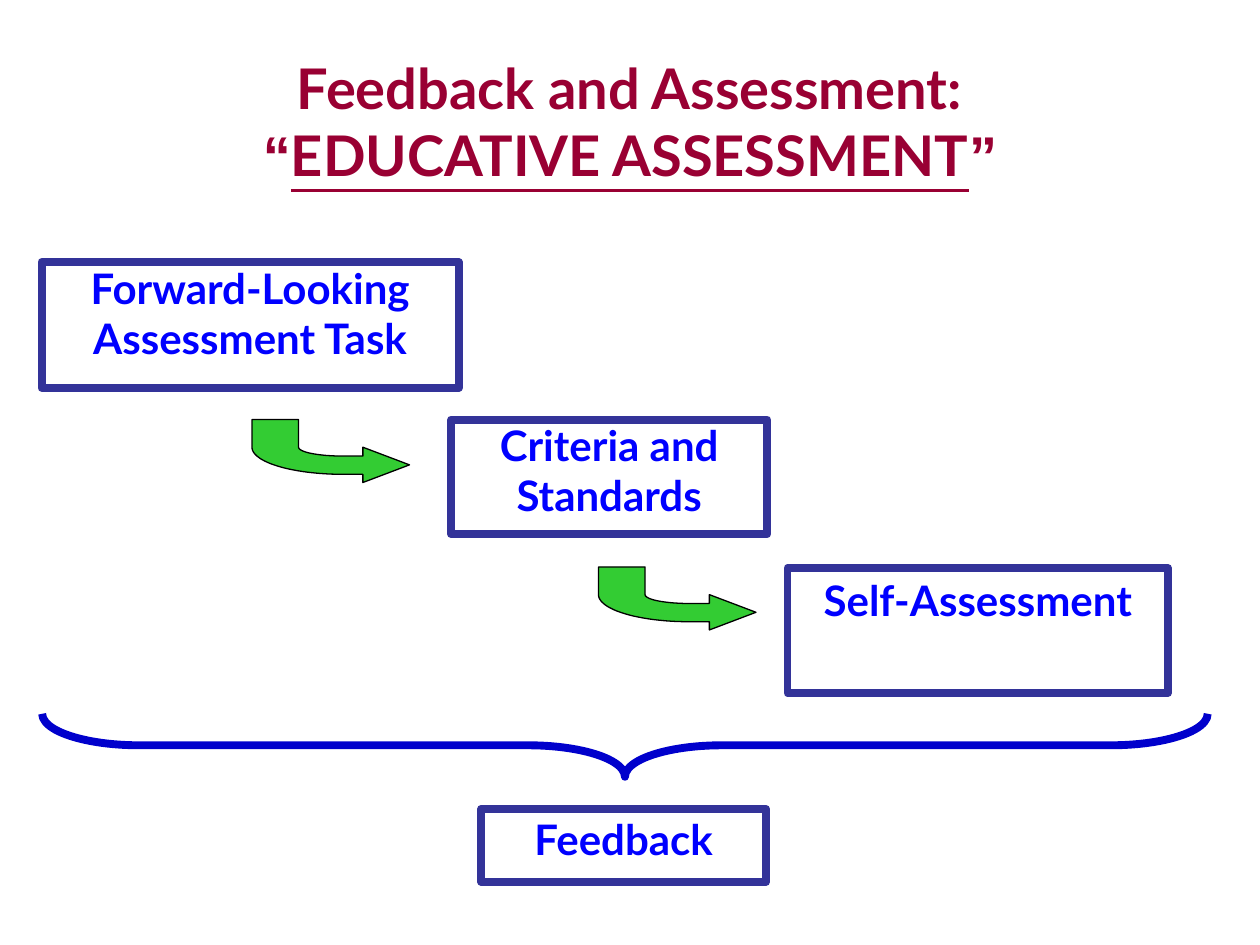
from dataclasses import dataclass
from math import cos, pi, sin

from pptx import Presentation
from pptx.dml.color import RGBColor
from pptx.enum.shapes import MSO_SHAPE
from pptx.enum.text import MSO_ANCHOR, MSO_AUTO_SIZE, PP_ALIGN
from pptx.util import Inches, Pt

RECT, BRACE = MSO_SHAPE.RECTANGLE, MSO_SHAPE.LEFT_BRACE
TOP, MIDDLE = MSO_ANCHOR.TOP, MSO_ANCHOR.MIDDLE
CENTER, FIXED = PP_ALIGN.CENTER, MSO_AUTO_SIZE.NONE
TITLE_ONLY = 5
HUES = {
    "title": "990033", "text": "0000FF", "frame": "333399", "brace": "0000CC",
    "arrow": "33CC33", "edge": "000000", "paper": "FFFFFF",
}


@dataclass
class Box:
    text: str
    left: float
    top: float
    width: float
    height: float
    inset: tuple[float, float] = (0, 0)
    lead: float = 1.0


@dataclass
class Arrow:
    left: float
    top: float


BOXES = [
    Box("Forward-Looking Assessment Task", 0.33, 2.08, 3.31, 1),
    Box("Criteria and Standards", 3.58, 3.33, 2.51, 0.91),
    Box("Self-Assessment", 6.25, 4.51, 3.02, 0.99, inset=(0.1, 0.05)),
    Box("Feedback", 3.82, 6.42, 2.26, 0.58, lead=1.1),
]
ARROWS = [Arrow(2, 3.33), Arrow(4.75, 4.5)]


def hue(name: str) -> RGBColor:
    return RGBColor.from_string(HUES[name])


def place(shape, left: float, top: float, width: float, height: float) -> None:
    shape.left, shape.top = Inches(left), Inches(top)
    shape.width, shape.height = Inches(width), Inches(height)


def outline(shape, name: str, weight: float) -> None:
    shape.shadow.inherit = False
    shape.line.color.rgb = hue(name)
    shape.line.width = Pt(weight)


def add_run(para, text: str, size: int, name: str, face: str = "Lato",
            under: bool = False) -> None:
    run = para.add_run()
    run.text = text
    font = run.font
    font.name, font.size, font.bold = face, Pt(size), True
    font.underline = under
    font.color.rgb = hue(name)


def draw_title(slide) -> None:
    title = slide.shapes.title
    place(title, 0.5, 0.33, 9, 1.25)
    title.fill.solid()
    title.fill.fore_color.rgb = hue("paper")
    frame = title.text_frame
    frame.auto_size, frame.vertical_anchor = FIXED, MIDDLE
    para = frame.paragraphs[0]
    para.alignment = CENTER
    add_run(para, "Feedback and Assessment:", 32, "title")
    para.add_line_break()
    add_run(para, "“", 32, "title", "Arial")
    add_run(para, "EDUCATIVE ASSESSMENT", 32, "title", under=True)
    add_run(para, "”", 32, "title", "Arial")


def draw_box(slide, box: Box) -> None:
    shape = slide.shapes.add_shape(RECT, 0, 0, 0, 0)
    place(shape, box.left, box.top, box.width, box.height)
    shape.fill.background()
    outline(shape, "frame", 4.5)
    frame = shape.text_frame
    frame.word_wrap, frame.vertical_anchor = True, TOP
    side, edge = map(Inches, box.inset)
    frame.margin_left = frame.margin_right = side
    frame.margin_top = frame.margin_bottom = edge
    para = frame.paragraphs[0]
    para.alignment, para.line_spacing = CENTER, box.lead
    add_run(para, box.text, 24, "text")


def bend(wide: float, high: float, steps: int = 24) -> list[tuple[float, float]]:
    turns = [pi / 2 * i / steps for i in range(steps + 1)]
    return [(0.72 - wide * sin(t), 0.22 + high * cos(t)) for t in turns]


def draw_arrow(slide, arrow: Arrow) -> None:
    head = [(1.25, 0.36), (0.88, 0.5), (0.88, 0.435)]
    stem = [(0, 0), (0.37, 0)]
    neck = [(0.88, 0.29), (0.88, 0.22)]
    points = head + bend(0.72, 0.215) + stem + bend(0.35, 0.07)[::-1] + neck
    spots = [(Inches(arrow.left + x), Inches(arrow.top + y)) for x, y in points]
    path = slide.shapes.build_freeform(*spots[0])
    path.add_line_segments(spots[1:], close=True)
    shape = path.convert_to_shape()
    shape.fill.solid()
    shape.fill.fore_color.rgb = hue("arrow")
    outline(shape, "edge", 0.75)


def draw_brace(slide) -> None:
    brace = slide.shapes.add_shape(BRACE, 0, 0, 0, 0)
    place(brace, 4.71, 1.29, 0.5, 9.25)
    brace.rotation = 270
    brace.adjustments[0], brace.adjustments[1] = 1.54, 0.5
    brace.fill.background()
    outline(brace, "brace", 4.5)


def main() -> None:
    deck = Presentation()
    deck.slide_width, deck.slide_height = Inches(10), Inches(7.5)
    slide = deck.slides.add_slide(deck.slide_layouts[TITLE_ONLY])
    draw_title(slide)
    for box in BOXES:
        draw_box(slide, box)
    for arrow in ARROWS:
        draw_arrow(slide, arrow)
    draw_brace(slide)
    deck.save("out.pptx")


if __name__ == "__main__":
    main()
